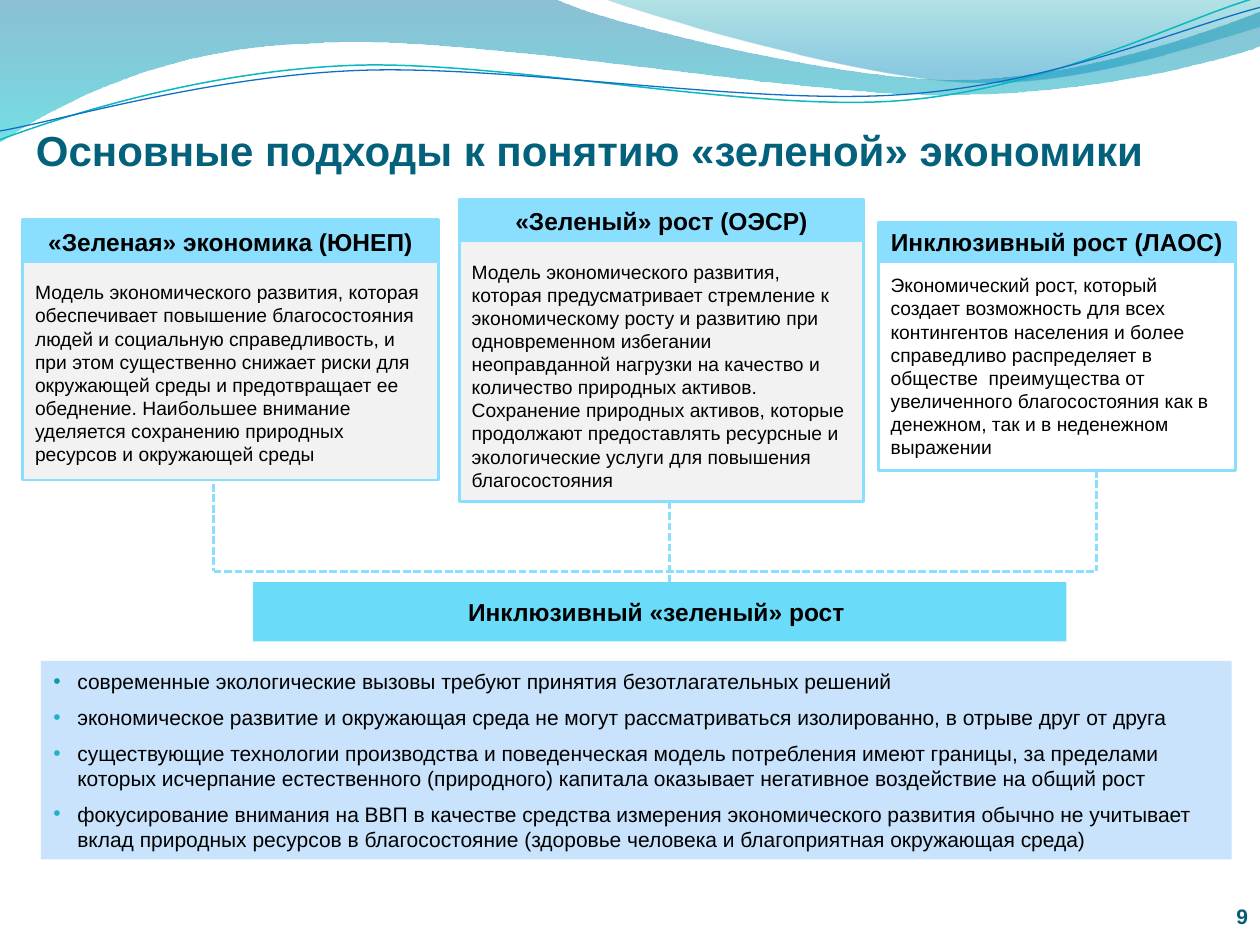
"""Builds the slide on approaches to the notion of a green economy."""
from math import cos, radians, sin

from lxml import etree
from pptx import Presentation
from pptx.dml.color import RGBColor
from pptx.enum.dml import MSO_LINE
from pptx.enum.shapes import MSO_CONNECTOR, MSO_SHAPE
from pptx.enum.text import MSO_ANCHOR, MSO_AUTO_SIZE, PP_ALIGN
from pptx.oxml.ns import qn
from pptx.util import Inches, Pt

LEFT, CENTER, RIGHT = PP_ALIGN.LEFT, PP_ALIGN.CENTER, PP_ALIGN.RIGHT
MIDDLE, BOTTOM = MSO_ANCHOR.MIDDLE, MSO_ANCHOR.BOTTOM
RECTANGLE, STRAIGHT = MSO_SHAPE.RECTANGLE, MSO_CONNECTOR.STRAIGHT
DASH, NO_AUTOFIT = MSO_LINE.SQUARE_DOT, MSO_AUTO_SIZE.NONE
COLUMNS, ROWS = 100, 75
COLORS = {
    "title": "04617B", "number": "045D75", "text": "000000",
    "sky": "8ADFFF", "grey": "F2F2F2", "white": "FFFFFF",
    "result": "6BDBFA", "list": "C8E3FB",
    "first bullet": "089CA3", "bullet": "21B2C9",
    "deep blue": "0074A1", "turquoise": "00C6CF", "teal": "00A1A9",
    "blue": "008BBF", "teal line": "0AB8BF", "blue line": "0F6FC6",
}

presentation = Presentation()
presentation.slide_width, presentation.slide_height = Inches(10), Inches(7.5)
column = presentation.slide_width / COLUMNS
row = presentation.slide_height / ROWS
slide = presentation.slides.add_slide(presentation.slide_layouts[5])
shapes = slide.shapes
title = shapes.title


def write_text(shape, text, size=11, bold=False, color="text", align=LEFT,
               anchor=MIDDLE, insets=(0.1, 0.05, 0.1, 0.05), space_before=0):
    """Fill a shape with one paragraph per line of text."""
    frame = shape.text_frame
    frame.text = text
    frame.word_wrap = True
    frame.auto_size = NO_AUTOFIT
    frame.vertical_anchor = anchor
    (frame.margin_left, frame.margin_top,
     frame.margin_right, frame.margin_bottom) = map(Inches, insets)
    for paragraph in frame.paragraphs:
        paragraph.alignment = align
        paragraph.space_before = Pt(space_before)
        font = paragraph.runs[0].font
        font.name, font.size, font.bold = "Arial", Pt(size), bold
        font.color.rgb = RGBColor.from_string(COLORS[color])


def add_box(x, y, width, height, fill, line=None):
    """Add a filled rectangle given in columns and rows."""
    box = shapes.add_shape(RECTANGLE, round(x * column), round(y * row),
                           round(width * column), round(height * row))
    box.shadow.inherit = False
    box.fill.solid()
    box.fill.fore_color.rgb = RGBColor.from_string(COLORS[fill])
    if line:
        box.line.color.rgb = RGBColor.from_string(COLORS[line])
        box.line.width = Pt(1.5)
    else:
        box.line.fill.background()
    return box


# Each wave: start, segments (two numbers: straight, six: Bézier), gradient, line, tilt
waves = [
    ((0, 0), [(44, -0.1), (47.6, 1.7, 66.4, 6.3, 75.8, 6.3),
              (85.3, 6.3, 95.8, 2.6, 100, 0.9), (100.1, 3.6),
              (98.3, 4.4, 87, 7.6, 74.6, 7.5), (62.2, 7.5, 38.2, 2.8, 25.7, 3.4),
              (12.9, 3.6, 4.6, 8.3, -0.1, 11.3), (0, 0)],
     [(0, "deep blue", 45), (1, "turquoise", 55)], None, 0),
    ((47.9, -0.1), [(50.9, 1.1, 68.2, 6.2, 76.9, 6.5),
                    (85.6, 6.9, 96.1, 3.2, 100, 2.1), (100, 0), (47.9, -0.1)],
     [(0, "teal", 30), (0.8, "blue", 45)], None, 0),
    ((0, 11.1), [(4.8, 9.3, 15.8, 5.7, 27.7, 5.2), (39.5, 4.7, 59.3, 8.9, 71.3, 8),
                 (83.3, 7.1, 93.8, 1.5, 99.8, -0.2)], None, ("teal line", 0.85), -2.7),
    ((0, 10.4), [(4.7, 9.6, 16.4, 6.1, 28.3, 5.6), (40.3, 5.1, 59.7, 8.4, 71.7, 7.5),
                 (83.6, 6.7, 94.1, 2.1, 100, 0.6)], None, ("blue line", 0.75), -2.7),
]
for start, segments, gradient, line, tilt in waves:
    numbers = [number for segment in (start, *segments) for number in segment]
    points = list(zip(numbers[::2], numbers[1::2]))
    center_x, center_y = [(min(axis) + max(axis)) / 2 for axis in zip(*points)]
    cosine, sine = cos(radians(-tilt)), sin(radians(-tilt))
    points = [(round((center_x + (x - center_x) * cosine - (y - center_y) * sine) * column),
               round((center_y + (x - center_x) * sine + (y - center_y) * cosine) * row))
              for x, y in points]
    builder = shapes.build_freeform(*points[0])
    builder.add_line_segments(points[1:], close=gradient is not None)
    wave = builder.convert_to_shape()
    wave.shadow.inherit = False
    wave.rotation = tilt
    outline = next(wave._element.iter(qn("a:path")))
    vertices = iter(outline.findall(qn("a:lnTo")))
    for segment in segments:
        group = [next(vertices) for _ in range(len(segment) // 2)]
        if len(group) == 3:
            curve = etree.SubElement(outline, qn("a:cubicBezTo"))
            group[0].addprevious(curve)
            for vertex in group:
                curve.append(vertex[0])
                outline.remove(vertex)
    if gradient:
        wave.fill.gradient()
        wave.fill.gradient_angle = 270
        for stop, (position, color, _) in zip(wave.fill.gradient_stops, gradient):
            stop.position = position
            stop.color.rgb = RGBColor.from_string(COLORS[color])
        for color, (_, _, opacity) in zip(wave._element.iter(qn("a:srgbClr")), gradient):
            etree.SubElement(color, qn("a:alpha"), val=str(opacity * 1000))
        wave.line.fill.background()
    else:
        wave.fill.background()
        wave.line.color.rgb = RGBColor.from_string(COLORS[line[0]])
        wave.line.width = Pt(line[1])

cards = [
    ("«Зеленая» экономика (ЮНЕП)", (1.8, 17.4, 33, 20.7), (1.8, 17.65, 33), "grey", 0.42,
     "Модель экономического развития, которая обеспечивает повышение благосостояния людей "
     "и социальную справедливость, и при этом существенно снижает риски для окружающей среды "
     "и предотвращает ее обеднение. Наибольшее внимание уделяется сохранению природных "
     "ресурсов и окружающей среды"),
    ("«Зеленый» рост (ОЭСР)", (36.45, 15.8, 32.1, 24), (36.6, 16, 31.8), "grey", 0.45,
     "Модель экономического развития, которая предусматривает стремление к экономическому "
     "росту и развитию при одновременном избегании неоправданной нагрузки на качество и "
     "количество природных активов. Сохранение природных активов, которые продолжают "
     "предоставлять ресурсные и экологические услуги для повышения благосостояния"),
    ("Инклюзивный рост (ЛАОС)", (69.7, 17.65, 28.35, 19.7), (69.7, 17.65, 28.35), "white", 0.36,
     "Экономический рост, который\nсоздает возможность для всех контингентов населения и "
     "более справедливо распределяет в обществе  преимущества от увеличенного "
     "благосостояния как в денежном, так и в неденежном выражении"),
]
for heading, card_area, heading_area, fill, top_inset, text in cards:
    write_text(add_box(*card_area, fill, "sky"), text, insets=(0.1, top_inset, 0.1, 0.05))
    write_text(add_box(*heading_area, 3.1, "sky", "sky"), heading, size=14, bold=True,
               align=CENTER, insets=(0.05, 0.05, 0.05, 0.05))

for x1, y1, x2, y2 in ((16.95, 38.4, 16.95, 45.3), (53.15, 39.8, 53.15, 46.2),
                       (87, 37.3, 87, 45.35), (16.95, 45.35, 87, 45.35)):
    connector = shapes.add_connector(STRAIGHT, round(x1 * column), round(y1 * row),
                                     round(x2 * column), round(y2 * row))
    connector.line.color.rgb = RGBColor.from_string(COLORS["sky"])
    connector.line.width = Pt(1.5)
    connector.line.dash_style = DASH
    etree.SubElement(connector._element.spPr, qn("a:effectLst"))

write_text(add_box(20.1, 46.2, 64.55, 4.7, "result"), "Инклюзивный «зеленый» рост ",
           size=14, bold=True, align=CENTER)

challenges = add_box(3.25, 52.45, 94.5, 15.75, "list")
write_text(challenges, "\n".join([
    "современные экологические вызовы требуют принятия безотлагательных решений",
    "экономическое развитие и окружающая среда не могут рассматриваться изолированно, "
    "в отрыве друг от друга",
    "существующие технологии производства и поведенческая модель потребления имеют границы, "
    "за пределами которых исчерпание естественного (природного) капитала оказывает "
    "негативное воздействие на общий рост",
    "фокусирование внимания на ВВП в качестве средства измерения экономического развития "
    "обычно не учитывает вклад природных ресурсов в благосостояние (здоровье человека и "
    "благоприятная окружающая среда)",
]), size=12, space_before=6)
for index, paragraph in enumerate(challenges.text_frame.paragraphs):
    properties = paragraph._p.get_or_add_pPr()
    properties.set("marL", str(Inches(0.19)))
    properties.set("indent", str(-Inches(0.19)))
    bullet_color = etree.SubElement(properties, qn("a:buClr"))
    etree.SubElement(bullet_color, qn("a:srgbClr"),
                     val=COLORS["bullet" if index else "first bullet"])
    etree.SubElement(properties, qn("a:buFont"), typeface="Arial")
    etree.SubElement(properties, qn("a:buChar"), char="•")

page_number = shapes.add_textbox(round(95.65 * column), round(69.7 * row),
                                 round(3.4 * column), round(4 * row))
write_text(page_number, "9", size=12, bold=True, color="number", align=RIGHT,
           anchor=BOTTOM, insets=(0, 0, 0, 0))

title.left, title.top = round(2.85 * column), round(8.5 * row)
title.width, title.height = round(96 * column), round(5.4 * row)
shapes._spTree.append(title._element)
write_text(title, "Основные подходы к понятию «зеленой» экономики", size=24, bold=True,
           color="title", anchor=BOTTOM, insets=(0, 0.05, 0, 0))

presentation.save("out.pptx")
